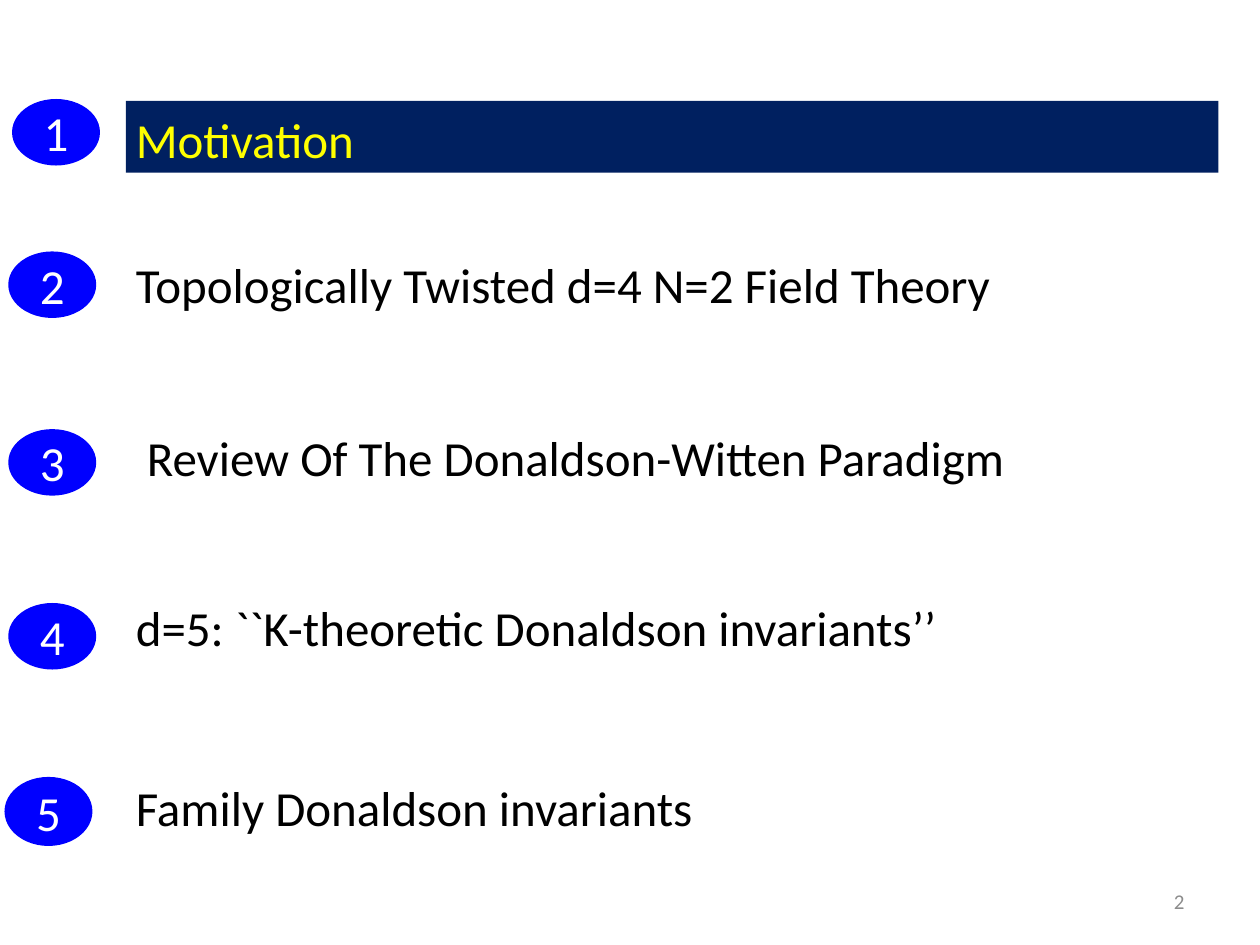
from pptx import Presentation
from pptx.dml.color import RGBColor
from pptx.enum.shapes import MSO_SHAPE
from pptx.enum.text import MSO_ANCHOR, PP_ALIGN
from pptx.util import Inches, Pt

COLORS = {
    "band": "002060",
    "badge": "0000FF",
    "badge_text": "FFFFFF",
    "current": "FFFF00",
    "topic": "000000",
    "page": "8C8C8C",
}


class Outline:
    font = "Calibri"
    size = 28

    def __init__(self, slide):
        self.slide = slide

    def color(self, name):
        return RGBColor.from_string(COLORS[name])

    def add_words(self, frame, words, color, size, align, anchor):
        frame.word_wrap = True
        frame.vertical_anchor = anchor
        paragraph = frame.paragraphs[0]
        paragraph.alignment = align
        run = paragraph.add_run()
        run.text = words
        run.font.name = self.font
        run.font.size = Pt(size)
        run.font.color.rgb = self.color(color)

    def shape(self, kind, place, fill):
        shape = self.slide.shapes.add_shape(kind, *map(Inches, place))
        shape.shadow.inherit = False
        shape.fill.solid()
        shape.fill.fore_color.rgb = self.color(fill)
        return shape

    def band(self, place):
        self.shape(MSO_SHAPE.RECTANGLE, place, "band").line.fill.background()

    def badge(self, number, place):
        badge = self.shape(MSO_SHAPE.OVAL, place, "badge")
        badge.line.color.rgb = self.color("badge")
        badge.line.width = Pt(2)
        self.add_words(badge.text_frame, str(number), "badge_text", self.size,
                       PP_ALIGN.CENTER, MSO_ANCHOR.MIDDLE)

    def text(self, words, place, color="topic", size=size,
             align=PP_ALIGN.LEFT, anchor=MSO_ANCHOR.TOP):
        box = self.slide.shapes.add_textbox(*map(Inches, place))
        self.add_words(box.text_frame, words, color, size, align, anchor)


TOPICS = [
    ("Motivation", 0.82, 8.92, "current", (0.11, 0.8, 0.67, 0.5)),
    ("Topologically Twisted d=4 N=2 Field Theory", 1.97, 9.08, "topic",
     (0.08, 2.01, 0.67, 0.5)),
    (" Review Of The Donaldson-Witten Paradigm", 3.34, 8.25, "topic",
     (0.08, 3.42, 0.67, 0.5)),
    ("d=5: ``K-theoretic Donaldson invariants’’", 4.69, 9.33, "topic",
     (0.08, 4.8, 0.67, 0.5)),
    ("Family Donaldson invariants", 6.12, 8.92, "topic",
     (0.05, 6.18, 0.67, 0.52)),
]


def main():
    deck = Presentation()
    deck.slide_width = Inches(10)
    deck.slide_height = Inches(7.5)
    outline = Outline(deck.slides.add_slide(deck.slide_layouts[6]))

    outline.band((1, 0.8, 8.67, 0.57))
    for number, (topic, top, width, color, badge_place) in enumerate(TOPICS, 1):
        outline.badge(number, badge_place)
        outline.text(topic, (0.98, top, width, 0.57), color)
    outline.text("2", (7.17, 6.95, 2.33, 0.4), "page", 12,
                 PP_ALIGN.RIGHT, MSO_ANCHOR.MIDDLE)

    deck.save("out.pptx")


if __name__ == "__main__":
    main()
